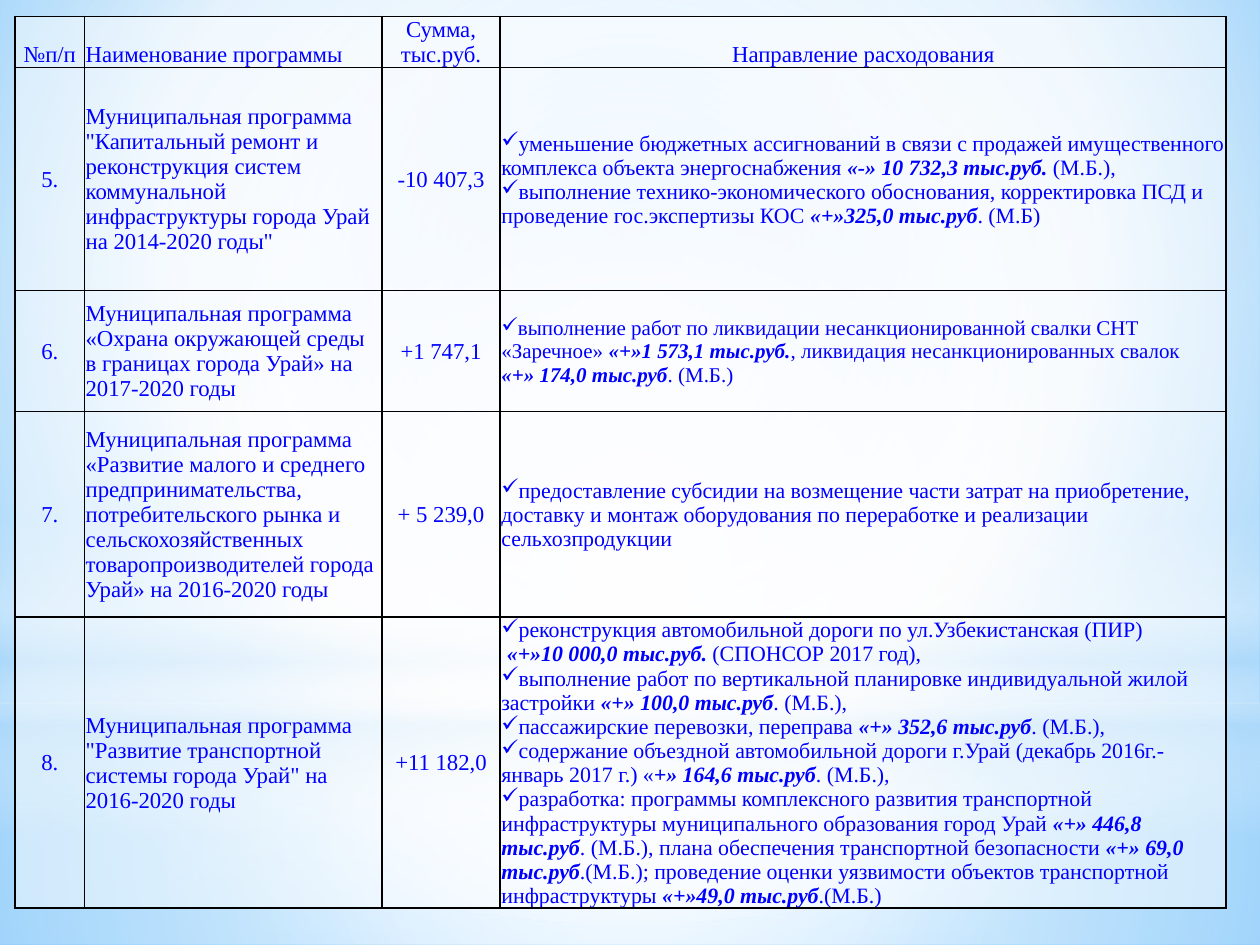
from pptx import Presentation, util as u
from pptx.dml.color import RGBColor
from pptx.enum import shapes, text
from pptx.oxml import ns, xmlchemy as xc
from lxml import etree

WIDE, HIGH = 10, 7.5
FONT, BLUE = "Times New Roman", "0000FF"
MID, LEFT = text.PP_ALIGN.CENTER, text.PP_ALIGN.LEFT
COLS = (0.55, 2.36, 0.94, 5.76)
ROWS = (0.4, 1.77, 0.96, 1.63, 2.31)

HEAD = ("№п/п", "Наименование программы", "Сумма, тыс.руб.", "Направление расходования")
# Asterisks enclose bold italic amounts; each program has a list of purposes
PLANS = (
    ("5.", "Муниципальная программа \"Капитальный ремонт и реконструкция систем "
     "коммунальной инфраструктуры города Урай на 2014-2020 годы\"", "-10 407,3", 12.5, (
         "уменьшение бюджетных ассигнований в связи с продажей имущественного комплекса "
         "объекта энергоснабжения *«-» 10 732,3 тыс.руб. *(М.Б.),",
         "выполнение технико-экономического обоснования, корректировка ПСД и проведение "
         "гос.экспертизы КОС *«+»325,0 тыс.руб*. (М.Б)")),
    ("6.", "Муниципальная программа «Охрана окружающей среды в границах города Урай» "
     "на 2017-2020 годы", "+1 747,1", 12, (
         "выполнение работ по ликвидации несанкционированной свалки СНТ «Заречное» "
         "*«+»1 573,1 тыс.руб.*, ликвидация несанкционированных свалок\n"
         "*«+» 174,0 тыс.руб*. (М.Б.)",)),
    ("7.", "Муниципальная программа «Развитие малого и среднего предпринимательства, "
     "потребительского рынка и сельскохозяйственных товаропроизводителей города Урай» "
     "на 2016-2020 годы", "+ 5 239,0", 12.5, (
         "предоставление субсидии на возмещение части затрат на приобретение, доставку и "
         "монтаж оборудования по переработке и реализации сельхозпродукции",)),
    ("8.", "Муниципальная программа \"Развитие транспортной системы города Урай\" "
     "на 2016-2020 годы", "+11 182,0", 12.5, (
         "реконструкция автомобильной дороги по ул.Узбекистанская (ПИР)\n"
         "* «+»10 000,0 тыс.руб. *(СПОНСОР 2017 год),",
         "выполнение работ по вертикальной планировке индивидуальной жилой застройки "
         "*«+» 100,0 тыс.руб*. (М.Б.),",
         "пассажирские перевозки, переправа *«+» 352,6 тыс.руб*. (М.Б.),",
         "содержание объездной автомобильной дороги г.Урай (декабрь 2016г.-январь 2017 г.) "
         "«*+» 164,6 тыс.руб*. (М.Б.),",
         "разработка: программы комплексного развития транспортной инфраструктуры "
         "муниципального образования город Урай *«+» 446,8 тыс.руб*. (М.Б.), плана "
         "обеспечения транспортной безопасности *«+» 69,0 тыс.руб*.(М.Б.); проведение оценки "
         "уязвимости объектов транспортной инфраструктуры *«+»49,0 тыс.руб*.(М.Б.)")),
)


def color(code):
    return RGBColor.from_string(code)


def node(root, tag, **attrs):
    return etree.SubElement(root, ns.qn(tag), {k: str(v) for k, v in attrs.items()})


def blend(root, stops, focus=None):
    """Swap the plain fill in root for a gradient: round with a focus, else downward."""
    old = root.find(ns.qn("a:solidFill"))
    grad = etree.Element(ns.qn("a:gradFill"), rotWithShape="1")
    row = node(grad, "a:gsLst")
    for pos, code, alpha in stops:
        stop = node(row, "a:gs", pos=pos * 1000)
        node(node(stop, "a:srgbClr", val=code), "a:alpha", val=alpha * 1000)
    if focus:
        way = node(grad, "a:path", **{"path": "circle"})
        node(way, "a:fillToRect", **{k: v * 1000 for k, v in zip("ltrb", focus)})
    else:
        node(grad, "a:lin", ang=90 * 60000, scaled=0)
    root.replace(old, grad)


def glow(slide, box, stops, focus=None, kind=shapes.MSO_SHAPE.RECTANGLE):
    shape = slide.shapes.add_shape(kind, *map(u.Inches, box))
    shape.shadow.inherit = False
    shape.line.fill.background()
    shape.fill.solid()
    blend(shape._element.spPr, stops, focus)


def sky(slide):
    """Soft blue backdrop made of layered light."""
    slide.background.fill.solid()
    blend(slide.element.find(".//" + ns.qn("p:bgPr")),
          ((0, "9ED5FF", 100), (60, "FFFFFF", 100), (100, "5BB9FF", 100)), (20, 10, 20, 60))
    core, edge = (50,) * 4, 0.744 * HIGH
    glow(slide, (0, edge, WIDE, HIGH - edge),
         ((0, "FFFFFF", 91), (37, "FFFFFF", 76), (100, "B4DCFA", 79)), core)
    glow(slide, (0, 0, WIDE, edge),
         ((0, "FFFFFF", 89), (48, "FFFFFF", 62), (100, "B4DCFA", 79)), core)
    glow(slide, (0, 0.55 * HIGH, WIDE, HIGH / 3),
         ((0, "FFFFFF", 0), (29, "FFFFFF", 30), (45, "B4DCFA", 40),
          (55, "FFFFFF", 26), (65, "B4DCFA", 60), (100, "FFFFFF", 0)))
    glow(slide, (0, 0.233 * HIGH, WIDE, edge),
         ((0, "FFFFFF", 100), (56, "FFFFFF", 0)), core, shapes.MSO_SHAPE.OVAL)


def write(para, words, size=13, align=LEFT, mark=None):
    para.alignment = align
    if mark:
        props = para._p.get_or_add_pPr()
        props.set("marL", "0")
        props.set("indent", "0")
        node(props, "a:buChar", char=mark)
    for turn, part in enumerate(words.split("*")):
        for step, line in enumerate(part.split("\n")):
            if step:
                para.add_line_break()
                node(para._p[-1], "a:rPr", sz=int(size * 100))
            if not line:
                continue
            run = para.add_run()
            run.text = line
            font = run.font
            font.name, font.size = FONT, u.Pt(size)
            font.bold = font.italic = turn % 2 == 1
            font.color.rgb = color(BLUE)


def dress(cell, anchor):
    """Margins, half-clear white fill and thin black borders."""
    cell.margin_left = cell.margin_right = cell.margin_top = u.Inches(0.01)
    cell.margin_bottom = 0
    cell.vertical_anchor = anchor
    cell.fill.solid()
    cell.fill.fore_color.rgb = color("FFFFFF")
    props = cell._tc.tcPr
    node(props.find(".//" + ns.qn("a:srgbClr")), "a:alpha", val=47000)
    for spot, side in enumerate("LRTB"):
        edge = node(props, "a:ln" + side, w=u.Pt(1))
        node(node(edge, "a:solidFill"), "a:srgbClr", val="000000")
        props.insert(spot, edge)


def grid(slide, box):
    """Program table whose columns and rows share out the box."""
    frame = slide.shapes.add_table(len(ROWS), len(COLS), *map(u.Inches, box))
    table = frame.table
    table.first_row = table.horz_banding = False
    for col, part in zip(table.columns, COLS):
        col.width = u.Inches(box[2] * part / sum(COLS))
    for row, part in zip(table.rows, ROWS):
        row.height = u.Inches(box[3] * part / sum(ROWS))
    for cell in table.iter_cells():
        dress(cell, text.MSO_ANCHOR.MIDDLE)
    # Heading row
    for spot, words in enumerate(HEAD):
        cell = table.cell(0, spot)
        cell.vertical_anchor = text.MSO_ANCHOR.BOTTOM
        write(cell.text_frame.paragraphs[0], words, align=LEFT if spot == 1 else MID)
    # Program rows
    for row, (*facts, size, goals) in enumerate(PLANS, 1):
        for spot, words in enumerate(facts):
            write(table.cell(row, spot).text_frame.paragraphs[0], words,
                  align=LEFT if spot == 1 else MID)
        frame = table.cell(row, 3).text_frame
        for turn, words in enumerate(goals):
            para = frame.add_paragraph() if turn else frame.paragraphs[0]
            write(para, words, size=size, mark="✓")


def main():
    deck = Presentation()
    deck.slide_width, deck.slide_height = u.Inches(WIDE), u.Inches(HIGH)
    slide = deck.slides.add_slide(deck.slide_layouts[6])
    sky(slide)
    grid(slide, (0.12, 0.13, sum(COLS), sum(ROWS)))
    deck.save("out.pptx")


if __name__ == "__main__":
    main()
